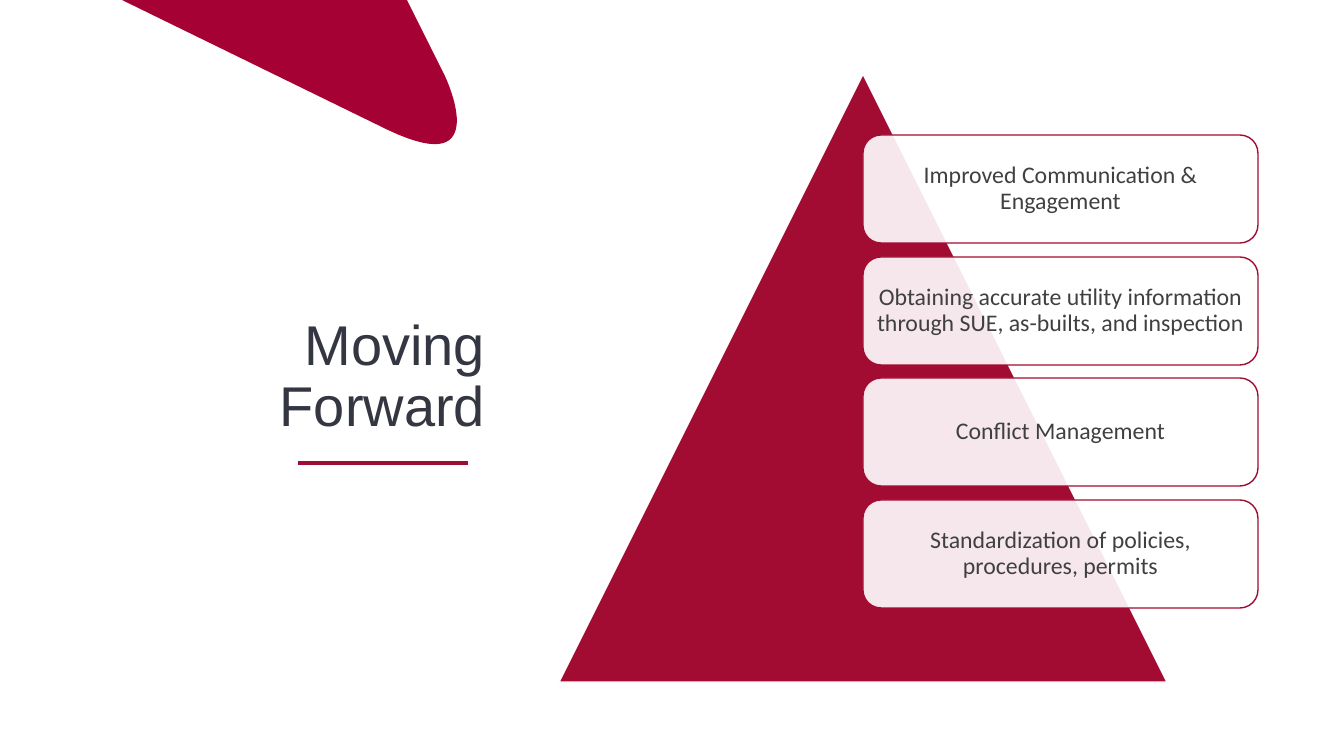
from dataclasses import dataclass

from pptx import Presentation
from pptx.dml.color import RGBColor
from pptx.enum.shapes import MSO_CONNECTOR as Connector, MSO_SHAPE as Shape
from pptx.enum.text import MSO_ANCHOR as Anchor, MSO_AUTO_SIZE as AutoSize, PP_ALIGN as Align
from pptx.oxml.ns import qn
from pptx.util import Pt

PX = 914400 / 100.8
CURVE_STEPS = 32


def px(length):
    """Turn whole pixels into EMU."""
    return round(length * PX)


@dataclass(frozen=True)
class Theme:
    """Colours, fonts and type sizes of the slide."""
    crimson: str = "A20C33"
    ribbon: str = "A50134"
    white: str = "FFFFFF"
    title_ink: str = "343741"
    card_ink: str = "404041"
    title_font: str = "Arial"
    card_font: str = "Calibri"
    title_size: int = 40
    card_size: int = 17


def write_text(frame, text, *, font, size, color, align, inset=(10, 5)):
    """Fill a text frame with one paragraph per line of text."""
    frame.word_wrap = True
    frame.auto_size = AutoSize.NONE
    frame.vertical_anchor = Anchor.MIDDLE
    frame.margin_left = frame.margin_right = px(inset[0])
    frame.margin_top = frame.margin_bottom = px(inset[1])
    frame.text = text
    for paragraph in frame.paragraphs:
        paragraph.alignment = align
        paragraph.line_spacing = 0.9
        paragraph.space_before = paragraph.space_after = Pt(0)
        paragraph.font.name = font
        paragraph.font.size = Pt(size)
        paragraph.font.color.rgb = RGBColor.from_string(color)


def bezier(start, control_a, control_b, end):
    """Return points along a cubic curve, after its start."""
    steps = [i / CURVE_STEPS for i in range(1, CURVE_STEPS + 1)]
    return [
        tuple(
            (1 - t) ** 3 * a + 3 * (1 - t) ** 2 * t * b + 3 * (1 - t) * t**2 * c + t**3 * d
            for a, b, c, d in zip(start, control_a, control_b, end)
        )
        for t in steps
    ]


class SlideBuilder:
    """Draws styled elements on one slide."""

    def __init__(self, slide, theme):
        self.slide = slide
        self.theme = theme

    def paint(self, shape, fill, line=None, alpha=None):
        """Set fill, outline and opacity percentage."""
        shape.shadow.inherit = False
        shape.fill.solid()
        shape.fill.fore_color.rgb = RGBColor.from_string(fill)
        if alpha is not None:
            color = shape._element.spPr.find(qn("a:solidFill"))[0]
            color.makeelement(qn("a:alpha"), {})
            opacity = color.makeelement(qn("a:alpha"), {"val": str(alpha * 1000)})
            color.append(opacity)
        if line:
            shape.line.color.rgb = RGBColor.from_string(line)
            shape.line.width = Pt(1)
        else:
            shape.line.fill.background()

    def title(self, text, left, top, width, height):
        """Place and format the title placeholder."""
        heading = self.slide.shapes.title
        heading.left, heading.top = px(left), px(top)
        heading.width, heading.height = px(width), px(height)
        write_text(heading.text_frame, text, font=self.theme.title_font,
                   size=self.theme.title_size, color=self.theme.title_ink, align=Align.RIGHT)

    def rule(self, start, end, y):
        """Draw the horizontal rule under the title."""
        rule = self.slide.shapes.add_connector(Connector.STRAIGHT, px(start), px(y), px(end), px(y))
        rule.line.color.rgb = RGBColor.from_string(self.theme.crimson)
        rule.line.width = Pt(2.25)
        properties = rule._element.spPr
        properties.append(properties.makeelement(qn("a:effectLst"), {}))

    def ribbon(self, outline):
        """Draw a closed outline, kept to tenths of a pixel."""
        start, *rest = [(x * 10, y * 10) for x, y in outline]
        builder = self.slide.shapes.build_freeform(*start, scale=PX / 10)
        builder.add_line_segments(rest, close=True)
        self.paint(builder.convert_to_shape(), self.theme.ribbon)

    def pyramid(self, left, top, side):
        """Draw the large triangle."""
        pyramid = self.slide.shapes.add_shape(
            Shape.ISOSCELES_TRIANGLE, px(left), px(top), px(side), px(side))
        self.paint(pyramid, self.theme.crimson, self.theme.white)

    def card(self, text, left, top, width, height):
        """Draw a translucent rounded card with centred text."""
        card = self.slide.shapes.add_shape(
            Shape.ROUNDED_RECTANGLE, px(left), px(top), px(width), px(height))
        self.paint(card, self.theme.white, self.theme.crimson, alpha=90)
        write_text(card.text_frame, text, font=self.theme.card_font, size=self.theme.card_size,
                   color=self.theme.card_ink, align=Align.CENTER, inset=(7, 7))


def main():
    """Build and save the slide."""
    deck = Presentation()
    deck.slide_width, deck.slide_height = px(1344), px(756)
    page = SlideBuilder(deck.slides.add_slide(deck.slide_layouts[5]), Theme())

    page.title("Moving\nForward", 20, 0, 475, 756)
    page.rule(468, 298, 463)
    tip, bend = (444, 74), (388, 130)
    page.ribbon([tip, (407, 0), (122, 0), bend, *bezier(bend, (497, 182), tip, tip)[:-1]])
    page.pyramid(559, 74, 608)

    goals = (
        "Improved Communication & Engagement",
        "Obtaining accurate utility information through SUE, as-builts, and inspection",
        "Conflict Management",
        "Standardization of policies, procedures, permits",
    )
    first_top, last_top = 135, 500
    for index, goal in enumerate(goals):
        top = first_top + round(index * (last_top - first_top) / (len(goals) - 1))
        page.card(goal, 863, top, 395, 108)

    deck.save("out.pptx")


if __name__ == "__main__":
    main()
